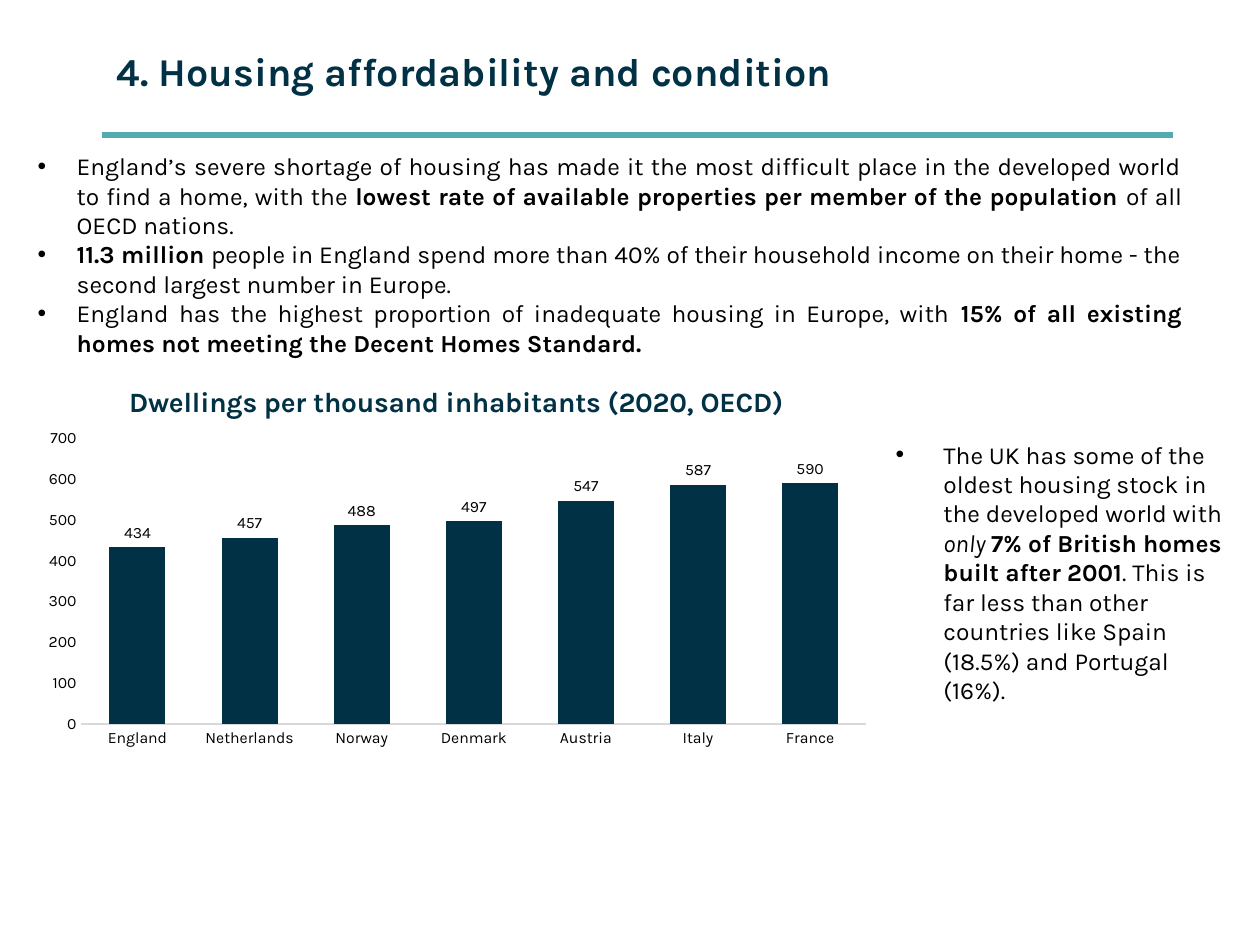
from pptx import Presentation
from pptx.chart.data import CategoryChartData as ChartData
from pptx.dml.color import RGBColor
from pptx.enum.chart import XL_CHART_TYPE as Kind, XL_LABEL_POSITION as Spot, XL_TICK_MARK as Tick
from pptx.enum.shapes import MSO_CONNECTOR as Link
from pptx.enum.text import MSO_ANCHOR as Anchor, PP_ALIGN as Align
from pptx.oxml import parse_xml
from pptx.oxml.ns import nsdecls
from pptx.oxml.xmlchemy import OxmlElement as Element
from pptx.util import Emu, Pt

SCALE = 9144
FONT = "Karla"
NAVY = RGBColor(0x00, 0x31, 0x44)
TEAL = RGBColor(0x53, 0xAA, 0xB1)
BLACK = RGBColor(0x00, 0x00, 0x00)
GREY = RGBColor(0xD9, 0xD9, 0xD9)

FACTS = [
    [("England’s severe shortage of housing has made it the most difficult place in the "
      "developed world to find a home, with the ", ""),
     ("lowest rate of available properties per member of the population ", "b"),
     ("of all OECD nations.", "")],
    [("11.3 million ", "b"),
     ("people in England spend more than 40% of their household income on their home - "
      "the second largest number in Europe.", "")],
    [("England has the highest proportion of inadequate housing in Europe, with ", ""),
     ("15% of all existing homes not meeting the Decent Homes Standard.", "b")],
]
AGE = [
    [("The UK has some of the oldest housing stock in the developed world with ", ""),
     ("only ", "i"),
     ("7% of British homes built after 2001", "b"),
     (". This is far less than other countries like Spain (18.5%) and Portugal (16%).", "")],
]
HOMES = {"England": 434, "Netherlands": 457, "Norway": 488, "Denmark": 497,
         "Austria": 547, "Italy": 587, "France": 590}


def px(*sizes):
    """Turn px lengths into EMU."""
    return [Emu(size * SCALE) for size in sizes]


def style(font, size, color=BLACK, bold=False, italic=False):
    """Set the face, size, colour and weight of a font."""
    font.name, font.size, font.bold, font.italic = FONT, Pt(size), bold, italic
    font.color.rgb = color


def add_head(slide, left, top, width, height):
    """Place the slide title with the teal rule below it."""
    frame = slide.shapes.add_textbox(*px(left, top, width, height)).text_frame
    frame.word_wrap = True
    frame.vertical_anchor = Anchor.MIDDLE
    frame.text = "4. Housing affordability and condition"
    style(frame.paragraphs[0].runs[0].font, 22.5, NAVY, True)
    base = top + height + 2
    ends = px(left - 2, base, left + width - 2, base)
    rule = slide.shapes.add_connector(Link.STRAIGHT, *ends)
    rule.line.color.rgb = TEAL
    rule.line.width = Pt(3.5)
    rule._element.spPr.append(Element("a:effectLst"))


def add_bullets(slide, left, top, width, height, items, indent, align):
    """Place a bulleted list of paragraphs with mixed runs."""
    frame = slide.shapes.add_textbox(*px(left, top, width, height)).text_frame
    frame.word_wrap = True
    for order, parts in enumerate(items):
        para = frame.add_paragraph() if order else frame.paragraphs[0]
        para.alignment = align
        props = para._p.get_or_add_pPr()
        props.set("marL", str(indent * SCALE))
        props.set("indent", str(-indent * SCALE))
        face, mark = Element("a:buFont"), Element("a:buChar")
        face.set("typeface", "Arial")
        mark.set("char", "•")
        props.extend([face, mark])
        for text, look in parts:
            run = para.add_run()
            run.text = text
            style(run.font, 14, bold=look == "b", italic=look == "i")


def make_layout(**sizes):
    """Make a manual chart layout from fractions of the chart."""
    inner = '<c:layoutTarget val="inner"/>' if "w" in sizes else ""
    modes = "".join(f'<c:{key}Mode val="edge"/>' for key in "xy")
    spots = "".join(f'<c:{key} val="{size}"/>' for key, size in sizes.items())
    return parse_xml(f'<c:layout {nsdecls("c")}><c:manualLayout>{inner}{modes}{spots}'
                     '</c:manualLayout></c:layout>')


def set_layout(owner, layout, after=None):
    """Put a layout in a chart part in place of its old one."""
    for old in owner.findall(layout.tag):
        owner.remove(old)
    if after is None:
        owner.insert(0, layout)
    else:
        after.addnext(layout)


def add_graph(slide, left, top, width, height):
    """Place the column chart of dwellings by country."""
    data = ChartData()
    data.categories = list(HOMES)
    data.add_series("Series 1", list(HOMES.values()))
    box = px(left, top, width, height)
    chart = slide.shapes.add_chart(Kind.COLUMN_CLUSTERED, *box, data).chart
    style(chart.font, 10)
    chart.has_legend = False
    chart.has_title = True
    title = chart.chart_title
    title.include_in_layout = False
    title.text_frame.text = "Dwellings per thousand inhabitants (2020, OECD)"
    style(title.text_frame.paragraphs[0].runs[0].font, 16, NAVY, True)
    set_layout(title._element, make_layout(x=0.11, y=0.05), title._element.tx)
    set_layout(chart._chartSpace.chart.plotArea, make_layout(x=0.06, y=0.2, w=0.92, h=0.72))
    for axis in (chart.category_axis, chart.value_axis):
        axis.has_major_gridlines = False
        axis.major_tick_mark = axis.minor_tick_mark = Tick.NONE
        style(axis.tick_labels.font, 9)
    chart.category_axis.format.line.color.rgb = GREY
    chart.category_axis.format.line.width = Pt(0.75)
    scale = chart.value_axis
    scale.format.line.fill.background()
    scale.minimum_scale, scale.maximum_scale, scale.major_unit = 0, 700, 100
    plot = chart.plots[0]
    plot.gap_width, plot.overlap = 100, -27
    plot.vary_by_categories = False
    fill = plot.series[0].format.fill
    fill.solid()
    fill.fore_color.rgb = NAVY
    labels = plot.series[0].data_labels
    labels.show_value = True
    labels.position = Spot.OUTSIDE_END
    style(labels.font, 9)


def main():
    """Build the slide and save it."""
    deck = Presentation()
    deck.slide_width, deck.slide_height = px(1000, 750)
    slide = deck.slides.add_slide(deck.slide_layouts[6])
    add_head(slide, 83, 7, 850, 98)
    add_bullets(slide, 20, 115, 928, 151, FACTS, 31, Align.JUSTIFY)
    add_bullets(slide, 701, 344, 280, 199, AGE, 38, Align.LEFT)
    add_graph(slide, 24, 285, 677, 315)
    deck.save("out.pptx")


if __name__ == "__main__":
    main()
